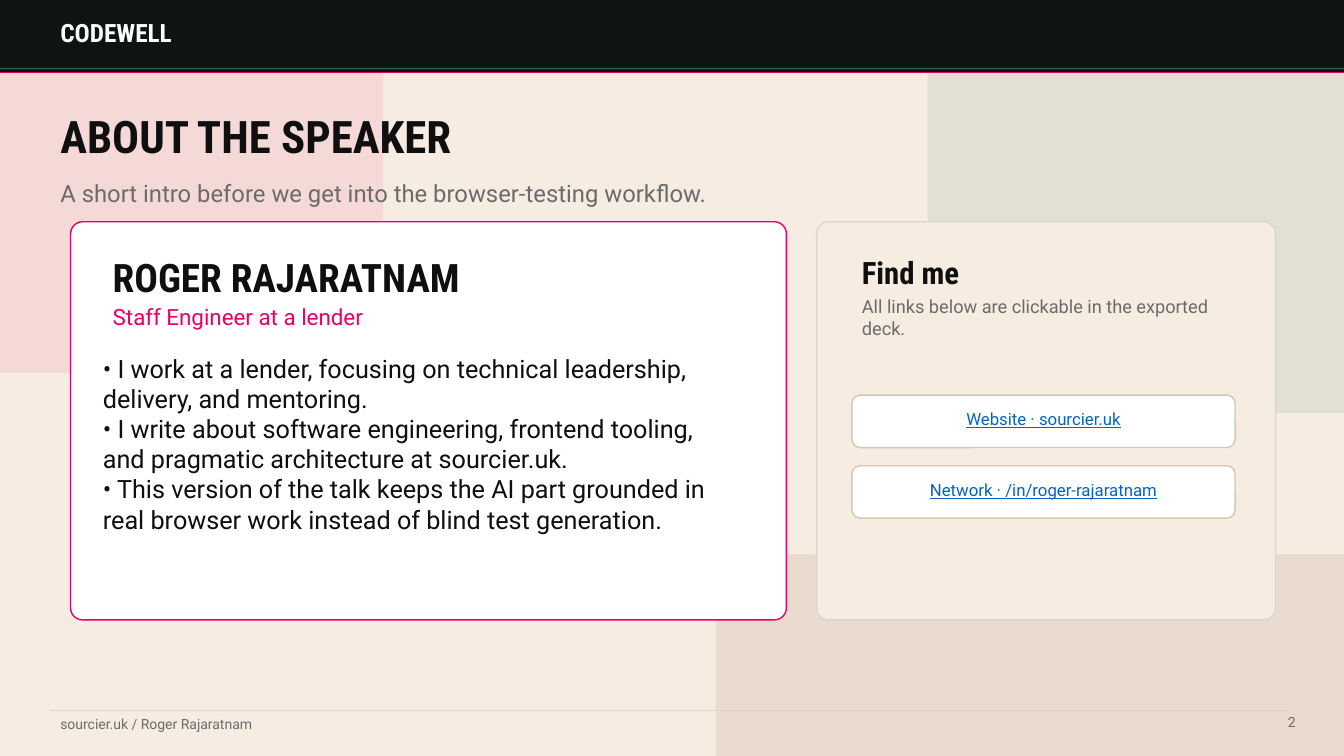
from lxml import etree
from pptx import Presentation
from pptx.dml.color import RGBColor
from pptx.enum.shapes import MSO_CONNECTOR, MSO_SHAPE
from pptx.enum.text import MSO_ANCHOR, PP_ALIGN
from pptx.oxml.ns import qn
from pptx.util import Inches, Pt

RECTANGLE = MSO_SHAPE.RECTANGLE
ROUNDED = MSO_SHAPE.ROUNDED_RECTANGLE
STRAIGHT = MSO_CONNECTOR.STRAIGHT
TOP, MIDDLE = MSO_ANCHOR.TOP, MSO_ANCHOR.MIDDLE
LEFT, CENTER, RIGHT = PP_ALIGN.LEFT, PP_ALIGN.CENTER, PP_ALIGN.RIGHT

BODY, HEADING = "Roboto", "Roboto Condensed"
INK, GRAY, RULE = "0F0F0F", "6B6B6B", "D7D7D7"
PINK, GREEN, CREAM, WHITE = "E8006A", "2A7D5B", "F6ECE1", "FFFFFF"
DARK, SAND, TAN, LINK = "101410", "E5D8C9", "D8C5AE", "0563C1"


def color(value):
    return RGBColor.from_string(value)


class SlideBuilder:
    def __init__(self, page):
        self.page = page

    def background(self, value):
        fill = self.page.background.fill
        fill.solid()
        fill.fore_color.rgb = color(value)

    def paint(self, fill, value, opacity=100):
        fill.solid()
        fill.fore_color.rgb = color(value)
        if opacity < 100:
            tone = fill._xPr.find(qn("a:solidFill"))[0]
            etree.SubElement(tone, qn("a:alpha"), val=str(opacity * 1000))

    def panel(self, left, top, width, height, fill, line=None, radius=0, opacity=100):
        kind = ROUNDED if radius else RECTANGLE
        shape = self.page.shapes.add_shape(
            kind, Inches(left), Inches(top), Inches(width), Inches(height))
        shape.shadow.inherit = False
        if radius:
            shape.adjustments[0] = radius / min(width, height)
        self.paint(shape.fill, fill, opacity)
        if line:
            self.paint(shape.line.fill, line)
            shape.line.width = Pt(1)
        else:
            shape.line.fill.background()

    def rule(self, left, right, y, value, opacity=100):
        line = self.page.shapes.add_connector(
            STRAIGHT, Inches(left), Inches(y), Inches(right), Inches(y))
        self.paint(line.line.fill, value, opacity)
        line.line.width = Pt(1)
        etree.SubElement(line._element.spPr, qn("a:effectLst"))

    def text(self, left, top, width, height, lines, size, value, font=BODY,
             bold=False, underline=False, align=LEFT, anchor=MIDDLE, inset=True):
        box = self.page.shapes.add_textbox(
            Inches(left), Inches(top), Inches(width), Inches(height))
        frame = box.text_frame
        frame.word_wrap = True
        frame.vertical_anchor = anchor
        if not inset:
            frame.margin_left = frame.margin_right = 0
            frame.margin_top = frame.margin_bottom = 0
        for index, line in enumerate(lines):
            para = frame.add_paragraph() if index else frame.paragraphs[0]
            para.alignment = align
            span = para.add_run()
            span.text = line
            span.font.name = font
            span.font.size = Pt(size)
            span.font.bold = bold
            span.font.underline = underline
            span.font.color.rgb = color(value)

    def heading(self, left, top, width, height, line, size, value=INK):
        self.text(left, top, width, height, [line], size, value, HEADING, bold=True)

    def link_button(self, left, top, label):
        self.panel(left, top, 3.8, 0.52, WHITE, TAN, radius=0.08)
        self.text(left + 0.14, top + 0.14, 3.52, 0.2, [label], 12, LINK,
                  underline=True, align=CENTER)


def main():
    deck = Presentation()
    deck.slide_width, deck.slide_height = Inches(13.33), Inches(7.5)
    slide = SlideBuilder(deck.slides.add_slide(deck.slide_layouts[6]))

    slide.background(CREAM)
    slide.panel(-2.1, -1.2, 5.9, 4.9, PINK, radius=0.3, opacity=8)
    slide.panel(9.2, -1.5, 6.2, 5.6, GREEN, radius=0.3, opacity=10)
    slide.panel(7.1, 5.5, 8.1, 3.4, SAND, radius=0.3, opacity=76)

    slide.panel(0, 0, 13.33, 0.72, DARK, DARK)
    slide.rule(0, 13.33, 0.72, PINK)
    slide.rule(0, 13.33, 0.68, GREEN, opacity=76)
    slide.heading(0.5, 0.17, 2.8, 0.3, "CODEWELL", 18, WHITE)

    slide.heading(0.5, 1, 8.9, 0.7, "ABOUT THE SPEAKER", 32)
    slide.text(0.5, 1.72, 10.4, 0.38,
               ["A short intro before we get into the browser-testing workflow."],
               17, GRAY, anchor=TOP)

    slide.panel(0.7, 2.2, 7.1, 3.95, WHITE, PINK, radius=0.12)
    slide.panel(8.1, 2.2, 4.55, 3.95, CREAM, RULE, radius=0.12)

    slide.heading(1.02, 2.58, 4.7, 0.34, "ROGER RAJARATNAM", 28)
    slide.text(1.02, 3.02, 4.6, 0.24, ["Staff Engineer at a lender"], 16, PINK)
    slide.text(1.02, 3.5, 6.15, 1.85, [
        "• I work at a lender, focusing on technical leadership, delivery, and mentoring.",
        "• I write about software engineering, frontend tooling, "
        "and pragmatic architecture at sourcier.uk.",
        "• This version of the talk keeps the AI part grounded in "
        "real browser work instead of blind test generation.",
    ], 18, INK, anchor=TOP, inset=False)

    slide.heading(8.45, 2.58, 1.5, 0.24, "Find me", 22)
    slide.text(8.45, 2.98, 3.65, 0.34,
               ["All links below are clickable in the exported deck."], 13, GRAY)
    labels = ["Website · sourcier.uk", "Network · /in/roger-rajaratnam"]
    for index, label in enumerate(labels):
        slide.link_button(8.45, 3.92 + 0.7 * index, label)

    slide.rule(0.5, 12.83, 7.05, RULE)
    slide.text(0.5, 7.08, 6, 0.2, ["sourcier.uk / Roger Rajaratnam"], 10, GRAY)
    slide.text(11.75, 7.08, 1.1, 0.2, ["2"], 10, GRAY,
               align=RIGHT, anchor=TOP, inset=False)

    deck.save("out.pptx")


if __name__ == "__main__":
    main()
